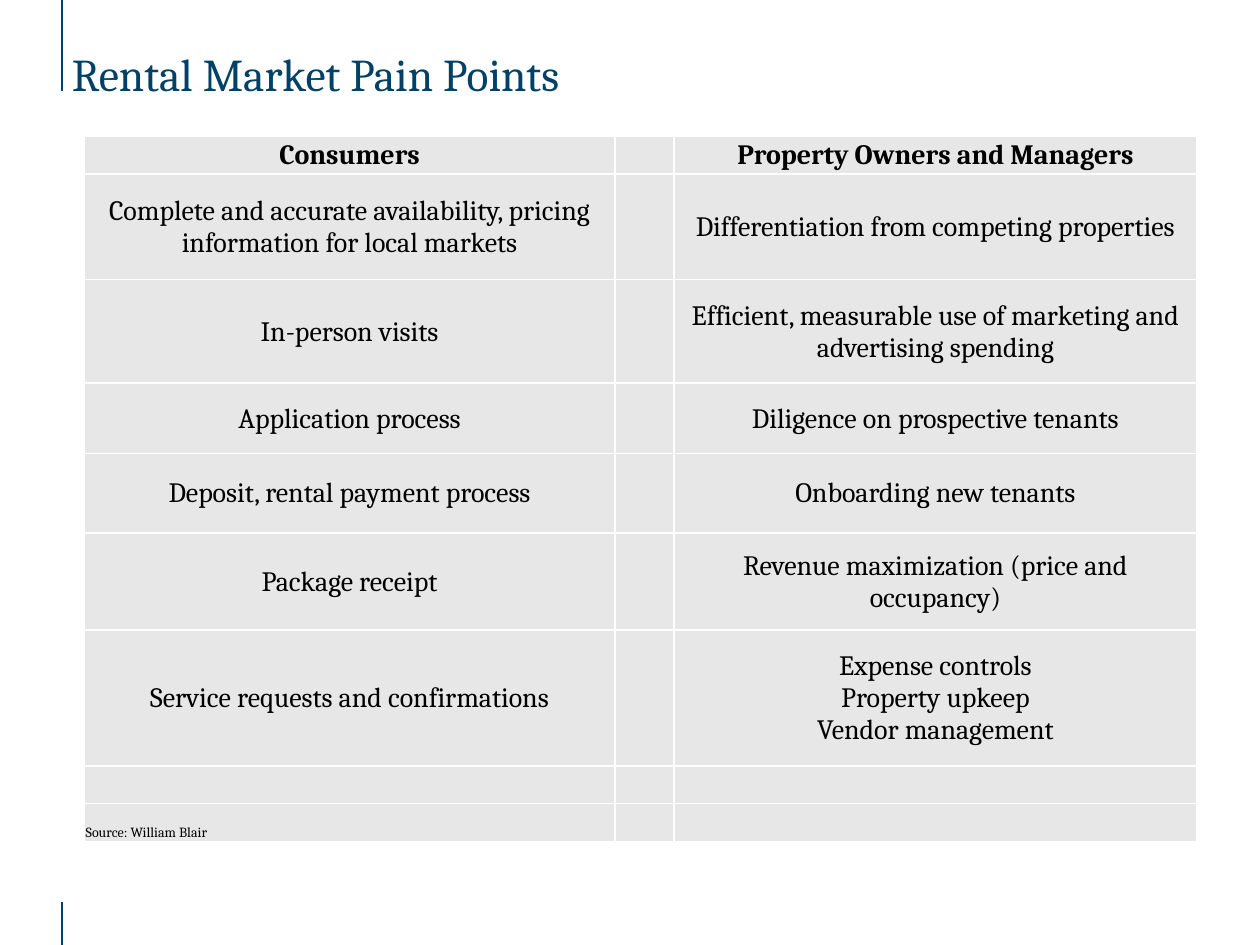
from dataclasses import dataclass

import pptx
import pptx.dml.color
import pptx.enum.shapes
import pptx.enum.text
import pptx.oxml
import pptx.oxml.ns
import pptx.util
from pptx.util import Inches

Align = pptx.enum.text.PP_ALIGN
Anchor = pptx.enum.text.MSO_ANCHOR


@dataclass(frozen=True)
class Theme:
    font: str = "Cambria"
    accent: str = "004165"
    text: str = "000000"
    cell_fill: str = "E7E7E7"
    border: str = "FFFFFF"
    title_size: int = 26
    body_size: int = 16
    source_size: int = 8
    line_width: int = 1


@dataclass(frozen=True)
class Rule:
    top: float
    bottom: float


@dataclass(frozen=True)
class PainPoint:
    height: float
    consumer: str = ""
    owner: str = ""


THEME = Theme()
RULE_X = 0.49
RULES = [Rule(0, 0.72), Rule(7.16, 7.5)]
COLUMN_WIDTHS = [4.21, 0.47, 4.15]
PAIN_POINTS = [
    PainPoint(0.3, "Consumers", "Property Owners and Managers"),
    PainPoint(0.84, "Complete and accurate availability, pricing information for local markets",
              "Differentiation from competing properties"),
    PainPoint(0.82, "In-person visits",
              "Efficient, measurable use of marketing and advertising spending"),
    PainPoint(0.56, "Application process", "Diligence on prospective tenants"),
    PainPoint(0.63, "Deposit, rental payment process", "Onboarding new tenants"),
    PainPoint(0.77, "Package receipt", "Revenue maximization (price and occupancy)"),
    PainPoint(1.08, "Service requests and confirmations",
              "Expense controls\nProperty upkeep\nVendor management"),
    PainPoint(0.3),
    PainPoint(0.3, "Source: William Blair"),
]


def rgb(value: str) -> pptx.dml.color.RGBColor:
    return pptx.dml.color.RGBColor.from_string(value)


def write(paragraph, text: str, size: int, color: str, bold: bool = False) -> None:
    paragraph.text = text
    font = paragraph.font
    font.name = THEME.font
    font.size = pptx.util.Pt(size)
    font.bold = bold
    font.color.rgb = rgb(color)


def draw_rule(slide, rule: Rule) -> None:
    line = slide.shapes.add_connector(
        pptx.enum.shapes.MSO_CONNECTOR.STRAIGHT,
        Inches(RULE_X), Inches(rule.top), Inches(RULE_X), Inches(rule.bottom))
    line.line.color.rgb = rgb(THEME.accent)
    line.line.width = pptx.util.Pt(THEME.line_width)
    properties = line._element.spPr
    properties.append(properties.makeelement(pptx.oxml.ns.qn("a:effectLst"), {}))


def draw_title(slide, text: str) -> None:
    title = slide.shapes.add_textbox(Inches(0.57), Inches(0.11), Inches(8.93), Inches(0.69))
    frame = title.text_frame
    frame.word_wrap = True
    frame.vertical_anchor = Anchor.BOTTOM
    frame.margin_left = frame.margin_right = frame.margin_top = frame.margin_bottom = 0
    heading = frame.paragraphs[0]
    heading.line_spacing = pptx.util.Pt(24)
    write(heading, text, THEME.title_size, THEME.accent)


def style_cell(cell) -> None:
    cell.margin_left = cell.margin_right = cell.margin_top = Inches(0.01)
    cell.margin_bottom = 0
    cell.fill.solid()
    cell.fill.fore_color.rgb = rgb(THEME.cell_fill)
    # Borders come before the fill in the cell properties
    for index, side in enumerate(("lnL", "lnR", "lnT", "lnB")):
        border = pptx.oxml.parse_xml(
            f'<a:{side} {pptx.oxml.ns.nsdecls("a")} w="{pptx.util.Pt(THEME.line_width)}">'
            f'<a:solidFill><a:srgbClr val="{THEME.border}"/></a:solidFill></a:{side}>')
        cell._tc.get_or_add_tcPr().insert(index, border)


def draw_pain_points(slide) -> None:
    table = slide.shapes.add_table(
        len(PAIN_POINTS), len(COLUMN_WIDTHS), Inches(0.67), Inches(1.08),
        Inches(sum(COLUMN_WIDTHS)), Inches(sum(point.height for point in PAIN_POINTS))).table
    table.first_row = table.horz_banding = False
    for column, width in zip(table.columns, COLUMN_WIDTHS):
        column.width = Inches(width)

    last = len(PAIN_POINTS) - 1
    for index, point in enumerate(PAIN_POINTS):
        table.rows[index].height = Inches(point.height)
        is_source = index == last
        for cell, text in zip(table.rows[index].cells, (point.consumer, "", point.owner)):
            style_cell(cell)
            cell.vertical_anchor = Anchor.BOTTOM if is_source else Anchor.MIDDLE
            entry = cell.text_frame.paragraphs[0]
            entry.alignment = Align.LEFT if is_source else Align.CENTER
            size = THEME.source_size if is_source else THEME.body_size
            write(entry, text, size, THEME.text, bold=index == 0)


def main() -> None:
    deck = pptx.Presentation()
    deck.slide_width, deck.slide_height = Inches(10), Inches(7.5)
    slide = deck.slides.add_slide(deck.slide_layouts[6])

    # Margin rules and title
    for rule in RULES:
        draw_rule(slide, rule)
    draw_title(slide, "Rental Market Pain Points")

    # Comparison table with the source line in its last row
    draw_pain_points(slide)
    deck.save("out.pptx")


if __name__ == "__main__":
    main()
